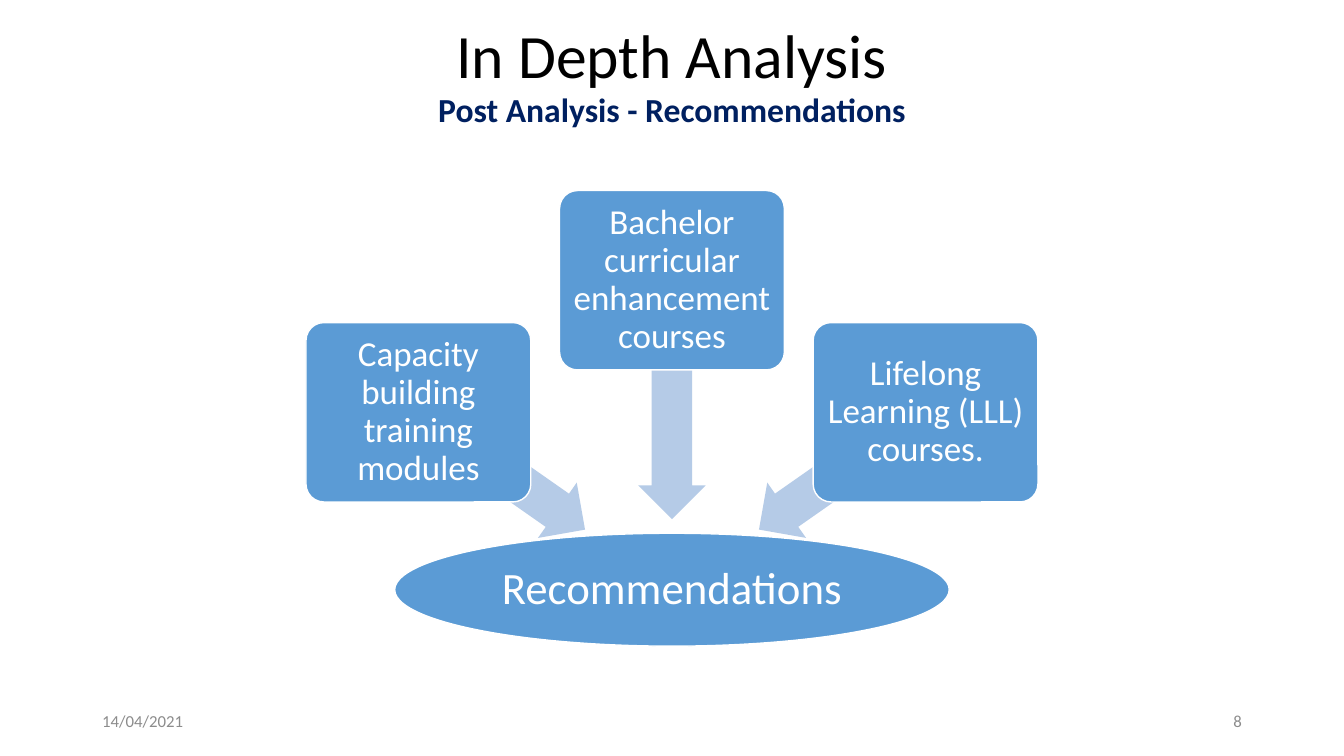
import pptx
import pptx.dml.color
import pptx.enum.shapes
import pptx.enum.text
import pptx.util

WIDE, HIGH = 13.33, 7.5
MID = WIDE / 2
PITCH = 2.515
BLUE, PALE, WHITE, GREY = "5B9BD5", "B5CBE7", "FFFFFF", "8C8C8C"
SHAPE = pptx.enum.shapes.MSO_SHAPE
ALIGN = pptx.enum.text.PP_ALIGN
ANCHOR = pptx.enum.text.MSO_ANCHOR

# side of the axis (-1, 0, 1), box top, arrow centre height, arrow length, wording
SOURCES = [
    (-1, 3.2, 4.675, 2.02, "Capacity building training modules"),
    (0, 1.89, 3.965, 2.37, "Bachelor curricular enhancement courses"),
    (1, 3.2, 4.675, 2.02, "Lifelong Learning (LLL) courses."),
]


def tint(color, code):
    color.rgb = pptx.dml.color.RGBColor.from_string(code)


def centred(x, y, width, height):
    """Return left, top, width and height around the centre x, y."""
    return [pptx.util.Inches(v) for v in (x - width / 2, y - height / 2, width, height)]


def write(shape, text, size, code, align=ALIGN.CENTER, inset=None,
          anchor=ANCHOR.MIDDLE, bold=False, lines=0.9):
    frame = shape.text_frame
    frame.text = text
    frame.word_wrap = True
    frame.auto_size = pptx.enum.text.MSO_AUTO_SIZE.NONE
    frame.vertical_anchor = anchor
    if inset is not None:
        frame.margin_left = frame.margin_right = pptx.util.Inches(inset)
        frame.margin_top = frame.margin_bottom = pptx.util.Inches(inset)
    para = frame.paragraphs[0]
    para.alignment = align
    para.line_spacing = lines
    font = para.runs[0].font
    font.name, font.size, font.bold = "Calibri", pptx.util.Pt(size), bold
    tint(font.color, code)


def add_form(slide, kind, place, fill, edge=None):
    form = slide.shapes.add_shape(kind, *place)
    form.shadow.inherit = False
    form.fill.solid()
    tint(form.fill.fore_color, fill)
    if edge:
        tint(form.line.color, edge)
        form.line.width = pptx.util.Pt(1)
    else:
        form.line.fill.background()
    return form


def add_label(slide, place, text, size, code, **style):
    write(slide.shapes.add_textbox(*place), text, size, code, **style)


def add_title(slide, text):
    title = slide.shapes.title
    title.left, title.top, title.width, title.height = centred(MID, 0.585, 11.5, 0.99)
    write(title, text, 44, "000000")


def add_source(slide, side, top, level, length, text):
    """Add a box and the arrow that leads from it to the ellipse."""
    arrow = add_form(slide, SHAPE.LEFT_ARROW,
                     centred(MID + 1.69 * side, level, length, 0.67), PALE)
    arrow.adjustments[0], arrow.adjustments[1] = 0.6, 0.5
    arrow.rotation = 270 + 55 * side
    box = add_form(slide, SHAPE.ROUNDED_RECTANGLE,
                   centred(MID + PITCH * side, top + 0.89, 2.23, 1.78), BLUE, WHITE)
    box.adjustments[0] = 0.1
    write(box, text, 25, WHITE, inset=0.05)


def main():
    deck = pptx.Presentation()
    deck.slide_width = pptx.util.Inches(WIDE)
    deck.slide_height = pptx.util.Inches(HIGH)
    slide = deck.slides.add_slide(deck.slide_layouts[5])

    add_title(slide, "In Depth Analysis")
    goal = add_form(slide, SHAPE.OVAL, centred(MID, 5.85, 5.5, 1.12), BLUE, WHITE)
    write(goal, "Recommendations", 32, WHITE, inset=0.02)
    for source in SOURCES:
        add_source(slide, *source)

    add_label(slide, centred(MID, 1.105, 10.08, 0.45), "Post Analysis - Recommendations",
              24, "002060", anchor=ANCHOR.BOTTOM, bold=True, lines=0.8)
    for side, text, align in ((-1, "14/04/2021", ALIGN.LEFT), (1, "8", ALIGN.RIGHT)):
        add_label(slide, centred(MID + 4.25 * side, 7.15, 3, 0.4), text, 12, GREY,
                  align=align, lines=1.0)
    deck.save("out.pptx")


if __name__ == "__main__":
    main()
